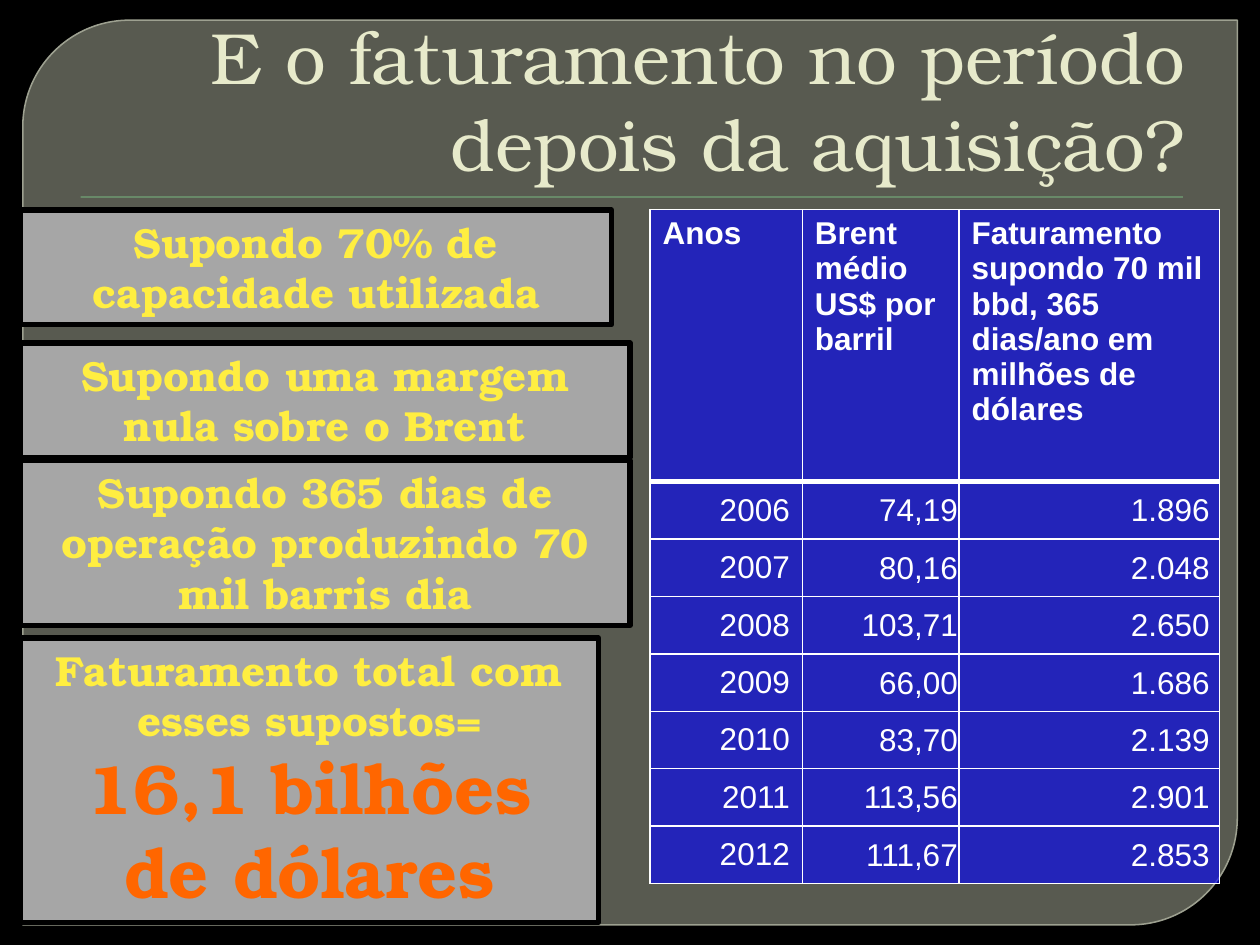
from lxml.etree import SubElement
from pptx import Presentation
from pptx.dml.color import RGBColor
from pptx.enum.shapes import MSO_SHAPE as Preset
from pptx.enum.text import MSO_ANCHOR as Anchor, MSO_AUTO_SIZE as AutoSize, PP_ALIGN as Align
from pptx.oxml import parse_xml
from pptx.oxml.ns import nsdecls, qn
from pptx.util import Pt

SERIF, SANS = "TeX Gyre Bonum", "Arial"
YELLOW, ORANGE, WHITE = "FFEE41", "FF6600", "FFFFFF"

ASSUMPTIONS = [
    (120, 338, 65.5, "Supondo 70% de capacidade utilizada"),
    (196, 348.5, 65.5, "Supondo uma margem nula sobre o Brent"),
    (263, 348.5, 94.5, "Supondo 365 dias de operação produzindo 70 mil barris dia"),
]
HEADINGS = ["Anos", "Brent médio\nUS$ por barril",
            "Faturamento supondo 70 mil bbd, 365 dias/ano em milhões de dólares"]
REVENUES = [
    ("2006", "74,19", "1.896"),
    ("2007", "80,16", "2.048"),
    ("2008", "103,71", "2.650"),
    ("2009", "66,00", "1.686"),
    ("2010", "83,70", "2.139"),
    ("2011", "113,56", "2.901"),
    ("2012", "111,67", "2.853"),
]


def color(hex_string):
    return RGBColor.from_string(hex_string)


def paint(fill, hex_string, opacity=100):
    fill.solid()
    fill.fore_color.rgb = color(hex_string)
    if opacity < 100:
        # The colour element is reached through the fill's own XML
        srgb = fill._xPr.find(qn("a:solidFill")).find(qn("a:srgbClr"))
        SubElement(srgb, qn("a:alpha")).set("val", str(opacity * 1000))


def line_xml(tag, hex_string, width):
    return parse_xml(
        f'<a:{tag} {nsdecls("a")} w="{Pt(width)}"><a:solidFill>'
        f'<a:srgbClr val="{hex_string}"/></a:solidFill></a:{tag}>')


class Deck:
    def __init__(self):
        self.presentation = Presentation()
        self.presentation.slide_width, self.presentation.slide_height = Pt(720), Pt(540)
        self.slide = self.presentation.slides.add_slide(self.presentation.slide_layouts[5])
        paint(self.slide.background.fill, "000000")

    def style(self, paragraph, size, hex_string, font=SERIF, bold=False, align=Align.LEFT):
        paragraph.alignment = align
        for run in paragraph.runs:
            run.font.size, run.font.name, run.font.bold = Pt(size), font, bold
            run.font.color.rgb = color(hex_string)

    def shape(self, preset, left, top, width, height, fill, opacity=100, line=None, line_width=1):
        shape = self.slide.shapes.add_shape(preset, Pt(left), Pt(top), Pt(width), Pt(height))
        shape.shadow.inherit = False
        paint(shape.fill, fill, opacity)
        if line:
            shape.line.color.rgb, shape.line.width = color(line), Pt(line_width)
        else:
            shape.line.fill.background()
        return shape

    def title(self, text, left, top, width, height):
        title = self.slide.shapes.title
        title.left, title.top, title.width, title.height = map(Pt, (left, top, width, height))
        frame = title.text_frame
        frame.text = text
        frame.word_wrap, frame.auto_size = True, AutoSize.NONE
        frame.vertical_anchor = Anchor.BOTTOM
        self.style(frame.paragraphs[0], 41.4, "E7EACB", align=Align.RIGHT)

    def box(self, left, top, width, height, *lines):
        """Grey box; each line is (text, size, colour)."""
        box = self.shape(Preset.RECTANGLE, left, top, width, height, "A6A6A6",
                         line="000000", line_width=3)
        frame = box.text_frame
        frame.word_wrap, frame.vertical_anchor = True, Anchor.TOP
        frame.auto_size = AutoSize.SHAPE_TO_FIT_TEXT
        frame.text = "\n".join(text for text, _, _ in lines)
        for paragraph, (_, size, hex_string) in zip(frame.paragraphs, lines):
            self.style(paragraph, size, hex_string, bold=True, align=Align.CENTER)
            for run in paragraph.runs:
                run.font._element.insert(0, line_xml("ln", "EDEFDA", 1))

    def cell(self, cell, text, header, margin_right):
        cell.text = text
        paint(cell.fill, "0000FF", 60)
        cell.vertical_anchor = Anchor.TOP if header else Anchor.MIDDLE
        if margin_right is not None:
            cell.margin_left = cell.margin_top = Pt(0.7)
            cell.margin_bottom, cell.margin_right = Pt(0), Pt(margin_right)
        for paragraph in cell.text_frame.paragraphs:
            self.style(paragraph, 18, WHITE, SANS, header, Align.LEFT if header else Align.RIGHT)
        properties = cell._tc.get_or_add_tcPr()
        for index, side in enumerate("LRTB"):
            width = 3 if header and side == "B" else 1
            properties.insert(index, line_xml(f"ln{side}", WHITE, width))

    def table(self, left, top, widths, header_height, row_height, rows, value_margins):
        height = header_height + row_height * (len(rows) - 1)
        table = self.slide.shapes.add_table(
            len(rows), len(widths), Pt(left), Pt(top), Pt(sum(widths)), Pt(height)).table
        for column, width in zip(table.columns, widths):
            column.width = Pt(width)
        for r, texts in enumerate(rows):
            table.rows[r].height = Pt(row_height if r else header_height)
            for c, text in enumerate(texts):
                self.cell(table.cell(r, c), text, r == 0, value_margins[c] if r else None)


def main():
    deck = Deck()
    panel = deck.shape(Preset.ROUND_2_DIAG_RECTANGLE, 13, 11.5, 694, 517, "888B7B", 65,
                       line="9DA090", line_width=0.87)
    panel.adjustments[0], panel.adjustments[1] = 0.118, 0
    rule = deck.shape(Preset.RECTANGLE, 46, 112.2, 630, 0.7, "72A376")
    title = deck.slide.shapes.title._element
    title.getparent().append(title)  # bring the title in front of the panel
    deck.title("E o faturamento no período depois da aquisição?", 36, 20, 648, 90)

    box_left = 11.5
    for top, width, height, text in ASSUMPTIONS:
        deck.box(box_left, top, width, height, (text, 24, YELLOW))
    deck.box(box_left, 364.5, 330.5, 162.5,
             ("Faturamento total com esses supostos=", 24, YELLOW),
             ("16,1 bilhões de dólares", 40, ORANGE))
    deck.table(371.5, 119.8, [87, 89.5, 149], 155.5, 32.8, [HEADINGS, *REVENUES],
               [None, 0.7, 5.7])
    deck.presentation.save("out.pptx")


if __name__ == "__main__":
    main()
